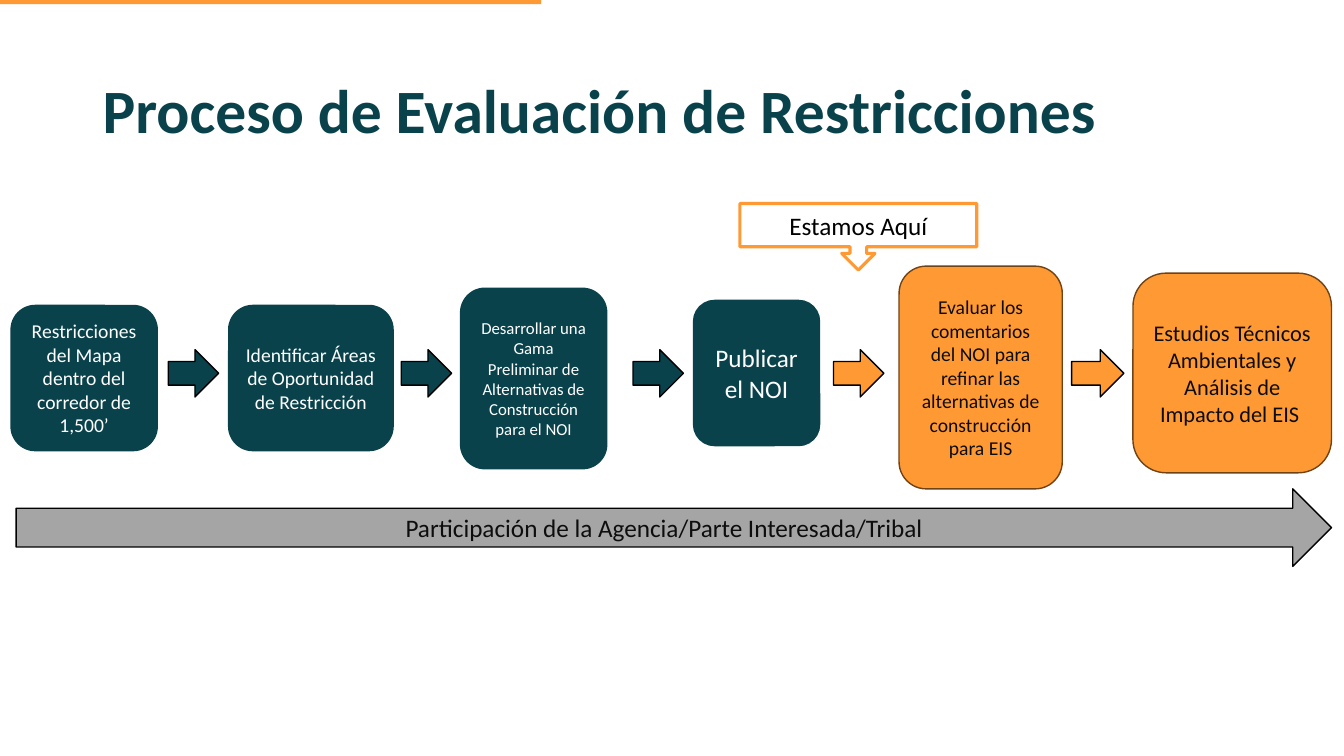
from dataclasses import dataclass

import pptx
import pptx.util
import pptx.dml.color
import pptx.enum.shapes
import pptx.enum.text

Pt = pptx.util.Pt
MSO = pptx.enum.shapes.MSO_SHAPE
ALIGN = pptx.enum.text.PP_ALIGN


@dataclass(frozen=True)
class Theme:
    font: str = "Calibri"
    teal: str = "0A424C"
    orange: str = "FF9933"
    brown: str = "704316"
    gray: str = "A5A5A5"
    white: str = "FFFFFF"
    black: str = "000000"
    ink: str = "0D0D0D"
    title: int = 44
    large: int = 18
    medium: int = 16
    body: int = 14
    small: int = 12


T = Theme()

STEPS = [
    (0, 28.1, 104.4, 103.7, T.body,
     "Restricciones del Mapa dentro del corredor de 1,500’"),
    (155.5, 28.1, 117.4, 103.7, T.body,
     "Identificar Áreas de Oportunidad de Restricción"),
    (321.1, 15.8, 104.4, 128.9, T.small,
     "Desarrollar una Gama Preliminar de Alternativas de Construcción para el NOI"),
    (487.5, 24.5, 90, 103.7, T.large, "Publicar el NOI"),
    (634.3, 0, 116.6, 159.1, T.body,
     "Evaluar los comentarios del NOI para refinar las alternativas de construcción para EIS"),
    (801.4, 5, 141.8, 142.6, T.medium,
     "Estudios Técnicos Ambientales y Análisis de Impacto del EIS "),
]
ARROWS = [(112.3, 36), (278.7, 36), (444.3, 36), (587.5, 36), (757.5, 37.4)]
DONE_STEPS = 4
DONE_ARROWS = 3


def rgb(color):
    return pptx.dml.color.RGBColor.from_string(color)


def write(sp, text, size, color, align=ALIGN.CENTER, bold=False):
    tf = sp.text_frame
    tf.word_wrap = True
    tf.vertical_anchor = pptx.enum.text.MSO_ANCHOR.MIDDLE
    p = tf.paragraphs[0]
    p.alignment = align
    r = p.add_run()
    r.text = text
    r.font.name = T.font
    r.font.size = Pt(size)
    r.font.bold = bold
    r.font.color.rgb = rgb(color)
    return p


def add_block(s, kind, box, fill, line=None, weight=1):
    sp = s.shapes.add_shape(kind, *map(Pt, box))
    sp.shadow.inherit = False
    sp.fill.solid()
    sp.fill.fore_color.rgb = rgb(fill)
    if line:
        sp.line.color.rgb = rgb(line)
        sp.line.width = Pt(weight)
    else:
        sp.line.fill.background()
    return sp


def add_accent(s, box):
    add_block(s, MSO.RECTANGLE, box, T.orange)


def add_title(s, box, text):
    sp = s.shapes.add_textbox(*map(Pt, box))
    p = write(sp, text, T.title, T.teal, ALIGN.LEFT, True)
    p.line_spacing = 0.9


def add_process(s, box):
    left, top, width, height = box
    for i, (dx, dy, w, h, size, text) in enumerate(STEPS):
        done = i < DONE_STEPS
        fill, line, color = ((T.teal, T.teal, T.white) if done
                             else (T.orange, T.brown, T.ink))
        sp = add_block(s, MSO.ROUNDED_RECTANGLE,
                       (left + dx, top + dy, w, h), fill, line)
        write(sp, text, size, color)
    for i, (dx, w) in enumerate(ARROWS):
        fill = T.teal if i < DONE_ARROWS else T.orange
        add_block(s, MSO.RIGHT_ARROW,
                  (left + dx, top + 59.7, w, 33.8), fill, T.black)


def add_participation(s, box, text):
    sp = add_block(s, MSO.RIGHT_ARROW, box, T.gray, T.black)
    write(sp, text, T.large, T.ink)


def add_marker(s, box, text):
    sp = add_block(s, MSO.DOWN_ARROW_CALLOUT, box, T.white, T.orange, 2.25)
    write(sp, text, T.large, T.black)


def main():
    prs = pptx.Presentation()
    prs.slide_width, prs.slide_height = Pt(960), Pt(540)
    s = prs.slides.add_slide(prs.slide_layouts[6])
    add_accent(s, (0, -0.7, 386.6, 3.6))
    add_title(s, (66.2, 28.8, 787, 104.4), "Proceso de Evaluación de Restricciones")
    add_process(s, (7.9, 190.1, 943.2, 159.1))
    add_participation(s, (11.5, 349.2, 939.6, 55.4),
                      "Participación de la Agencia/Parte Interesada/Tribal")
    add_marker(s, (528.5, 145.4, 169.2, 47.5), "Estamos Aquí")
    prs.save("out.pptx")


if __name__ == "__main__":
    main()
